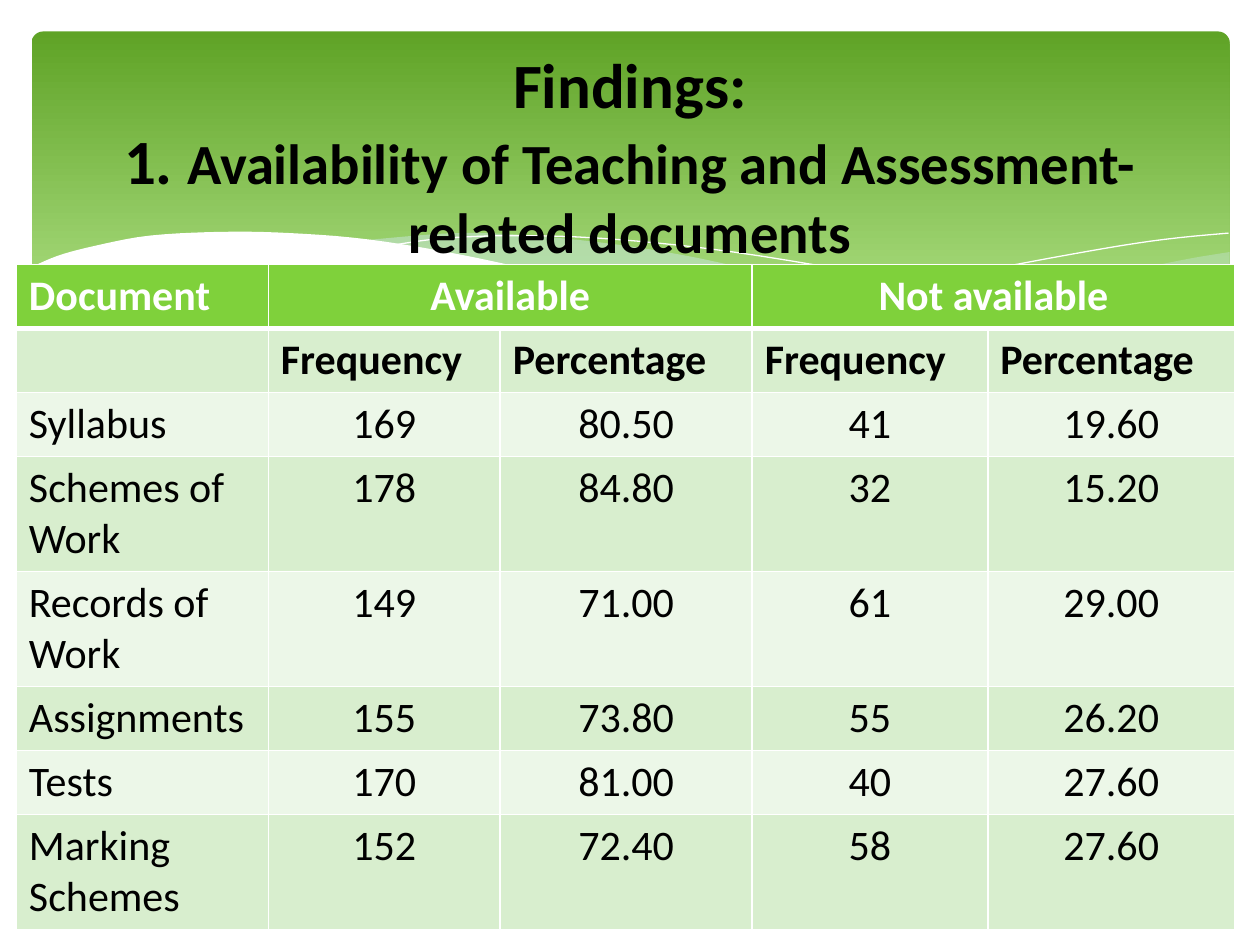
from dataclasses import dataclass

from lxml import etree
from pptx import Presentation
from pptx import util as u
from pptx.dml.color import RGBColor
from pptx.enum import shapes, text
from pptx.oxml.ns import qn


@dataclass(frozen=True)
class Theme:
    font: str = "Calibri"
    banner_top: str = "5FA326"
    banner_bottom: str = "B2E389"
    wave: str = "D6ECFF"
    white: str = "FFFFFF"
    ink: str = "000000"
    header: str = "7FD13B"
    dark_band: str = "D8EECE"
    light_band: str = "ECF7E8"
    title_size: float = 36
    subtitle_size: float = 32.4
    table_size: float = 24


THEME = Theme()
SWELL_RIGHT = [(9.76, 2), (9.35, 2.07), (8.61, 2.23), (7.53, 2.48), (6.61, 2.65)]
SWELL_RIGHT_BASE = [(6.61, 2.65), (7.32, 2.74), (8.03, 2.78), (8.72, 2.74),
                    (9.28, 2.63), (9.76, 2.47)]
SWELL_MIDDLE = [(8.93, 2.73), (8.07, 2.6), (7.06, 2.4), (6.29, 2.22), (5.55, 2.05),
                (4.89, 1.94), (4.2, 1.87), (3.61, 1.85), (2.86, 1.91)]
SWELL_MIDDLE_BASE = [(2.86, 1.91), (3.62, 2.03), (4.49, 2.22), (5.66, 2.48),
                     (6.5, 2.64), (7.22, 2.74), (7.96, 2.78), (8.93, 2.73)]
LINE_MIDDLE = [(3.09, 1.95), (3.53, 1.89), (4.16, 1.87), (4.89, 1.9), (5.82, 2),
               (6.95, 2.19), (7.95, 2.41), (9.07, 2.72)]
LINE_RIGHT = [(6.13, 2.57), (6.95, 2.35), (7.76, 2.16), (8.66, 1.99), (9.24, 1.9),
              (9.75, 1.85)]
FOREGROUND = [(9.77, 2.46), (9.2, 2.65), (8.63, 2.74), (8.09, 2.77), (7.44, 2.74),
              (6.48, 2.62), (5.55, 2.45), (4.47, 2.2), (3.65, 2.02), (2.92, 1.9),
              (2.3, 1.85), (1.77, 1.84), (1.19, 1.87), (0.76, 1.95), (0.46, 2.03),
              (0.23, 2.13)]

COLUMN_WIDTHS = [2, 1.84, 2, 1.87, 1.96]
SINGLE_ROW, DOUBLE_ROW = 0.5, 0.9
ROWS = [
    ["Document", "Available", "", "Not available", ""],
    ["", "Frequency", "Percentage", "Frequency", "Percentage"],
    ["Syllabus", "169", "80.50", "41", "19.60"],
    ["Schemes of Work", "178", "84.80", "32", "15.20"],
    ["Records of Work", "149", "71.00", "61", "29.00"],
    ["Assignments", "155", "73.80", "55", "26.20"],
    ["Tests", "170", "81.00", "40", "27.60"],
    ["Marking Schemes", "152", "72.40", "58", "27.60"],
]


def smooth(knots, steps=5):
    """Return points on a Catmull-Rom curve through the knots."""
    padded = [knots[0], *knots, knots[-1]]
    points = [knots[0]]
    for a, b, c, d in zip(padded, padded[1:], padded[2:], padded[3:]):
        for step in range(1, steps + 1):
            t = step / steps
            points.append(tuple(
                (2 * q + (r - p) * t + (2 * p - 5 * q + 4 * r - s) * t ** 2
                 + (3 * q - p - 3 * r + s) * t ** 3) / 2
                for p, q, r, s in zip(a, b, c, d)))
    return points


class SlideBuilder:
    def __init__(self, theme, page):
        self.theme = theme
        self.page = page

    def banner(self, left, top, width, height):
        box = self.page.shapes.add_shape(
            shapes.MSO_SHAPE.ROUNDED_RECTANGLE,
            *map(u.Inches, (left, top, width, height)))
        box.adjustments[0] = 0.034
        box.shadow.inherit = False
        box.line.fill.background()
        box.fill.gradient()
        box.fill.gradient_angle = 270
        stops = [(0, self.theme.banner_top), (0.9, self.theme.banner_bottom)]
        for stop, (position, color) in zip(box.fill.gradient_stops, stops):
            stop.position = position
            stop.color.rgb = RGBColor.from_string(color)

    def outline(self, points, closed):
        start, *others = [(u.Inches(x), u.Inches(y)) for x, y in points]
        builder = self.page.shapes.build_freeform(*start)
        builder.add_line_segments(others, close=closed)
        shape = builder.convert_to_shape()
        shape.shadow.inherit = False
        return shape

    def wave(self, points, color, opacity=100):
        shape = self.outline(points, closed=True)
        shape.line.fill.background()
        shape.fill.solid()
        shape.fill.fore_color.rgb = RGBColor.from_string(color)
        if opacity < 100:
            tint = shape.fill._xPr.find(".//" + qn("a:srgbClr"))
            etree.SubElement(tint, qn("a:alpha"), val=str(opacity * 1000))

    def hairline(self, points):
        shape = self.outline(points, closed=False)
        shape.fill.background()
        shape.line.color.rgb = RGBColor.from_string(self.theme.white)
        shape.line.width = u.Pt(0)

    def style(self, span, size, color, bold):
        span.font.name = self.theme.font
        span.font.size = u.Pt(size)
        span.font.bold = bold
        span.font.color.rgb = RGBColor.from_string(color)

    def title(self, left, top, width, height, lead, subtitle):
        box = self.page.shapes.add_textbox(*map(u.Inches, (left, top, width, height)))
        frame = box.text_frame
        frame.word_wrap = True
        frame.vertical_anchor = text.MSO_ANCHOR.MIDDLE
        para = frame.paragraphs[0]
        para.alignment = text.PP_ALIGN.CENTER
        para.text = lead
        for span in para.runs:
            self.style(span, self.theme.title_size, self.theme.ink, True)
        span = para.add_run()
        span.text = subtitle
        self.style(span, self.theme.subtitle_size, self.theme.ink, True)

    def borders(self, cell, top, bottom):
        properties = cell._tc.get_or_add_tcPr()
        sides = [("a:lnL", 1), ("a:lnR", 1), ("a:lnT", top), ("a:lnB", bottom)]
        for index, (side, width) in enumerate(sides):
            line = etree.Element(qn(side), w=str(u.Pt(width)))
            fill = etree.SubElement(line, qn("a:solidFill"))
            etree.SubElement(fill, qn("a:srgbClr"), val=self.theme.white)
            properties.insert(index, line)

    def table(self, left, top, widths, rows):
        heights = [DOUBLE_ROW if " " in row[0] else SINGLE_ROW for row in rows]
        grid = self.page.shapes.add_table(
            len(rows), len(widths),
            *map(u.Inches, (left, top, sum(widths), sum(heights)))).table
        for column, width in zip(grid.columns, widths):
            column.width = u.Inches(width)
        for r, (values, height) in enumerate(zip(rows, heights)):
            grid.rows[r].height = u.Inches(height)
            for c, value in enumerate(values):
                self.cell(grid.cell(r, c), value, r, c)
        for column in (1, 3):
            grid.cell(0, column).merge(grid.cell(0, column + 1))

    def cell(self, cell, value, row, column):
        theme = self.theme
        band = theme.dark_band if row % 2 else theme.light_band
        cell.fill.solid()
        cell.fill.fore_color.rgb = RGBColor.from_string(theme.header if row == 0 else band)
        self.borders(cell, top=3 if row == 1 else 1, bottom=3 if row == 0 else 1)
        cell.text_frame.text = value
        para = cell.text_frame.paragraphs[0]
        para.font.size = u.Pt(theme.table_size)
        if column and row != 1:
            para.alignment = text.PP_ALIGN.CENTER
        for span in para.runs:
            self.style(span, theme.table_size,
                       theme.white if row == 0 else theme.ink, row < 2)


def main():
    deck = Presentation()
    deck.slide_width, deck.slide_height = u.Inches(10), u.Inches(7.5)
    slide = SlideBuilder(THEME, deck.slides.add_slide(deck.slide_layouts[6]))
    slide.banner(0.25, 0.25, 9.51, 2.7)
    slide.wave(smooth(SWELL_RIGHT) + smooth(SWELL_RIGHT_BASE), THEME.wave, 29)
    slide.wave(smooth(SWELL_MIDDLE) + smooth(SWELL_MIDDLE_BASE), THEME.wave, 40)
    slide.hairline(smooth(LINE_MIDDLE))
    slide.hairline(smooth(LINE_RIGHT))
    slide.wave(smooth(FOREGROUND) + [(0.23, 3.29), (9.77, 3.29)], THEME.white)
    slide.table(0.13, 2.1, COLUMN_WIDTHS, ROWS)
    slide.title(0.5, 0.37, 9, 1.73, "Findings:\v1. ",
                "Availability of Teaching and Assessment-related documents")
    deck.save("out.pptx")


if __name__ == "__main__":
    main()
